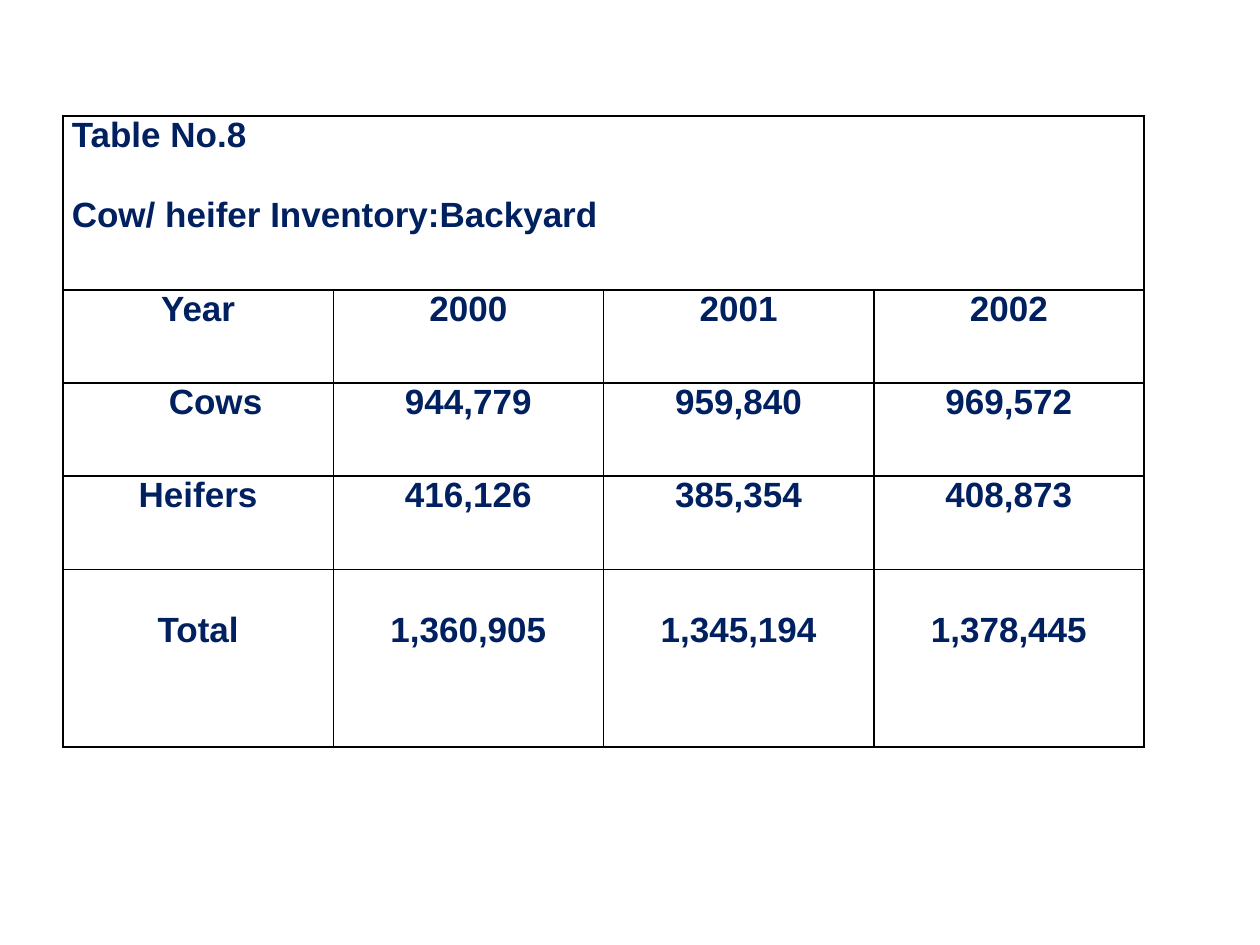
import pptx
import pptx.dml.color
import pptx.enum.text
import pptx.oxml.ns
import pptx.util
from lxml import etree

COLORS = {"text": "002060", "border": "000000", "background": "FFFFFF"}
FONT = "Arial"
FONT_SIZE = pptx.util.Pt(20)
LINE_HEIGHT = pptx.util.Pt(23.5)
ALIGN = pptx.enum.text.PP_ALIGN

TITLE_LINES = ["Table No.8", "Cow/ heifer Inventory:Backyard"]
INVENTORY = [
    ["Year", "2000", "2001", "2002"],
    ["Cows", "944,779", "959,840", "969,572"],
    ["Heifers", "416,126", "385,354", "408,873"],
    ["Total", "1,360,905", "1,345,194", "1,378,445"],
]
ROW_HEIGHTS = [1.38, 0.74, 0.74, 0.74, 1.41]


def set_borders(cell):
    properties = cell._tc.get_or_add_tcPr()
    for side in ("lnL", "lnR", "lnT", "lnB"):
        line = etree.SubElement(properties, pptx.oxml.ns.qn(f"a:{side}"), w=str(pptx.util.Pt(1)))
        fill = etree.SubElement(line, pptx.oxml.ns.qn("a:solidFill"))
        etree.SubElement(fill, pptx.oxml.ns.qn("a:srgbClr"), val=COLORS["border"])


def style_cell(cell):
    set_borders(cell)
    cell.fill.solid()
    cell.fill.fore_color.rgb = pptx.dml.color.RGBColor.from_string(COLORS["background"])
    cell.margin_left = cell.margin_right = pptx.util.Inches(0.07)
    cell.margin_top = cell.margin_bottom = 0


def write_cell(cell, text, alignment):
    cell.text_frame.text = text
    for paragraph in cell.text_frame.paragraphs:
        paragraph.alignment = alignment
        for run in paragraph.runs:
            run.font.name = FONT
            run.font.size = FONT_SIZE
            run.font.bold = True
            run.font.color.rgb = pptx.dml.color.RGBColor.from_string(COLORS["text"])


def write_title(cell):
    write_cell(cell, "\n".join(TITLE_LINES), ALIGN.JUSTIFY)
    cell.text_frame.paragraphs[1].space_before = LINE_HEIGHT


def add_inventory_table(slide, left, top, width):
    """Place the table: a merged title row above the inventory grid."""
    column_count = len(INVENTORY[0])
    height = pptx.util.Inches(sum(ROW_HEIGHTS))
    frame = slide.shapes.add_table(len(ROW_HEIGHTS), column_count, left, top, width, height)
    table = frame.table
    for column in table.columns:
        column.width = width // column_count
    for row, row_height in zip(table.rows, ROW_HEIGHTS):
        row.height = pptx.util.Inches(row_height)
    for cell in table.iter_cells():
        style_cell(cell)

    table.cell(0, 0).merge(table.cell(0, column_count - 1))
    write_title(table.cell(0, 0))
    for row_index, values in enumerate(INVENTORY, start=1):
        for column_index, value in enumerate(values):
            write_cell(table.cell(row_index, column_index), value, ALIGN.CENTER)

    cows = table.cell(2, 0).text_frame.paragraphs[0]
    cows.alignment = ALIGN.LEFT
    cows._p.get_or_add_pPr().set("marL", str(pptx.util.Inches(0.77)))
    for column_index in range(column_count):
        table.cell(len(INVENTORY), column_index).margin_top = LINE_HEIGHT


def main():
    presentation = pptx.Presentation()
    presentation.slide_width = pptx.util.Inches(10)
    presentation.slide_height = pptx.util.Inches(7.5)
    slide = presentation.slides.add_slide(presentation.slide_layouts[6])
    add_inventory_table(
        slide,
        left=int(presentation.slide_width * 0.05),
        top=pptx.util.Inches(0.92),
        width=pptx.util.Inches(8.58),
    )
    presentation.save("out.pptx")


if __name__ == "__main__":
    main()
